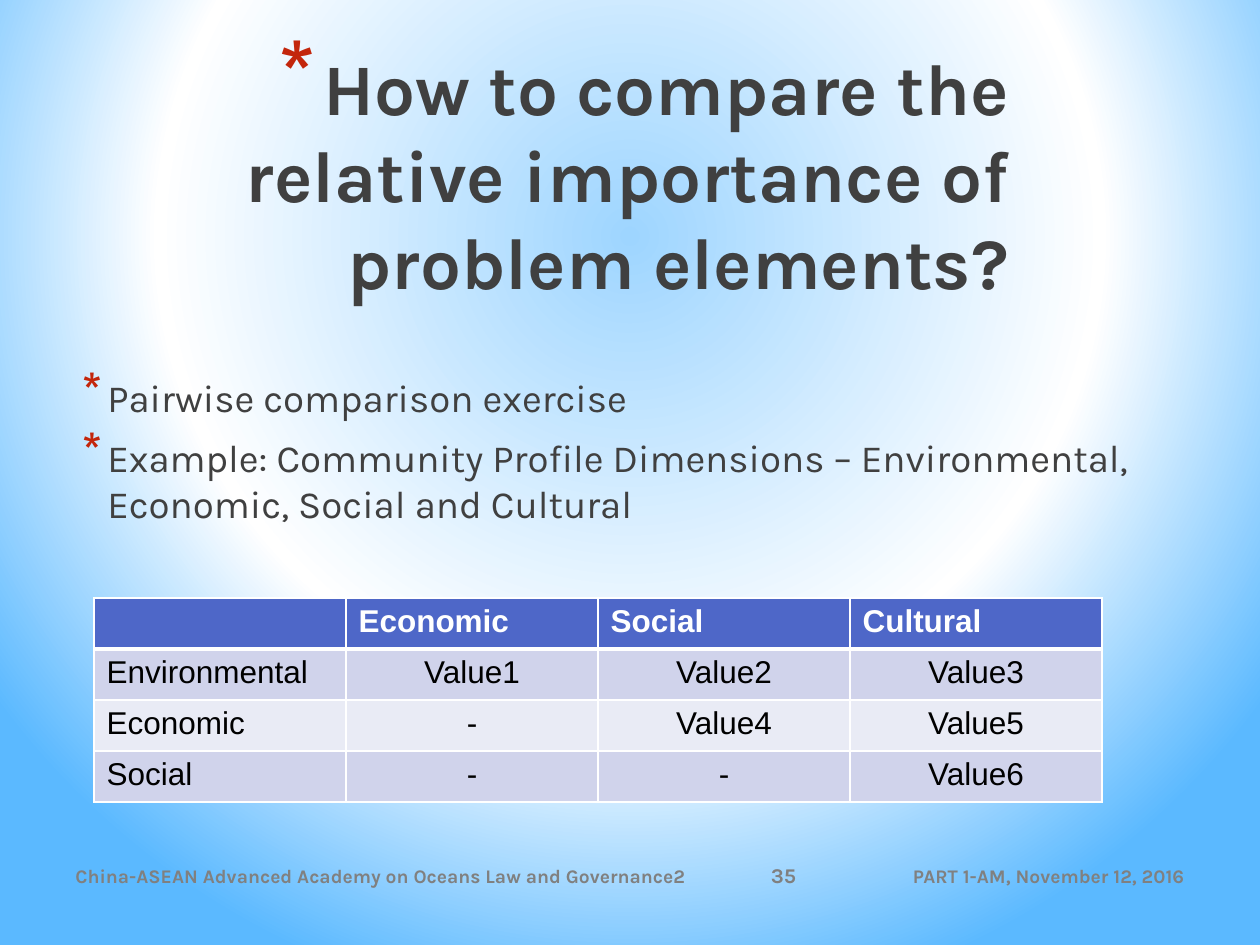
from pptx import Presentation
from pptx.dml.color import RGBColor
from pptx.enum.text import MSO_ANCHOR, PP_ALIGN
from pptx.oxml import parse_xml
from pptx.oxml.ns import nsdecls
from pptx.util import Emu, Pt

LEFT, CENTER, RIGHT = PP_ALIGN.LEFT, PP_ALIGN.CENTER, PP_ALIGN.RIGHT
TOP, MIDDLE = MSO_ANCHOR.TOP, MSO_ANCHOR.MIDDLE

SCALE = 914400 / 126  # EMU per px
WIDTH, HEIGHT = 1260, 945

DARK = RGBColor(0x40, 0x40, 0x40)
GRAY = RGBColor(0x80, 0x80, 0x80)
RED = RGBColor(0xC3, 0x26, 0x0C)
WHITE = RGBColor(0xFF, 0xFF, 0xFF)
BLACK = RGBColor(0x00, 0x00, 0x00)
HEADER_BLUE = RGBColor(0x4E, 0x67, 0xC8)
BAND_DARK = RGBColor(0xD0, 0xD3, 0xEB)
BAND_LIGHT = RGBColor(0xE9, 0xEB, 0xF5)
GLOW = [(0, RGBColor(0x9E, 0xD5, 0xFF)), (60, WHITE),
        (100, RGBColor(0x5B, 0xB9, 0xFF))]

TITLE_FONT = {"name": "Karla", "size": Pt(41.4), "bold": True}
BODY_FONT = {"name": "Karla", "size": Pt(22), "bold": False}
FOOTER_FONT = {"name": "Karla", "size": Pt(11), "bold": True}
NUMBER_FONT = {**FOOTER_FONT, "size": Pt(12)}
HEADER_FONT = {"name": "Arial", "size": Pt(18), "bold": True}
CELL_FONT = {**HEADER_FONT, "bold": False}

# Content: bullet is (left margin px, first-line indent px, size %)
TEXTS = [
    {"lines": ["How to compare the relative importance of problem elements?"],
     "box": (124, 37, 897, 158), "font": TITLE_FONT, "color": DARK,
     "align": RIGHT, "anchor": TOP, "bullet": (44, -44, 128)},
    {"lines": ["Pairwise comparison exercise",
               "Example: Community Profile Dimensions – Environmental, "
               "Economic, Social and Cultural"],
     "box": (63, 368, 1134, 189), "font": BODY_FONT, "color": DARK,
     "align": LEFT, "anchor": TOP, "bullet": (32, -25, 130)},
    {"lines": ["China-ASEAN Advanced Academy on Oceans Law and Governance2"],
     "box": (63, 851, 667, 50), "font": FOOTER_FONT, "color": GRAY,
     "align": LEFT, "anchor": MIDDLE, "bullet": None},
    {"lines": ["35"],
     "box": (740, 850, 87, 50), "font": NUMBER_FONT, "color": GRAY,
     "align": CENTER, "anchor": MIDDLE, "bullet": None},
    {"lines": ["PART 1-AM, November 12, 2016"],
     "box": (851, 851, 346, 50), "font": FOOTER_FONT, "color": GRAY,
     "align": RIGHT, "anchor": MIDDLE, "bullet": None},
]
COMPARISON = [
    ["", "Economic", "Social", "Cultural"],
    ["Environmental", "Value1", "Value2", "Value3"],
    ["Economic", "-", "Value4", "Value5"],
    ["Social", "-", "-", "Value6"],
]
TABLE_LEFT, TABLE_TOP, COLUMN_WIDTH, ROW_HEIGHT = 94, 598, 252, 51


def px(value):
    return Emu(round(value * SCALE))


def write(paragraph, text, font, color, align):
    paragraph.alignment = align
    if not text:
        return
    run = paragraph.add_run()
    run.text = text
    for attribute, value in font.items():
        setattr(run.font, attribute, value)
    run.font.color.rgb = color


def add_bullet(paragraph, margin, indent, percent):
    properties = paragraph._p.get_or_add_pPr()
    properties.set("marL", str(px(margin)))
    properties.set("indent", str(px(indent)))
    for xml in (f'<a:buClr {nsdecls("a")}><a:srgbClr val="{RED}"/></a:buClr>',
                f'<a:buSzPct {nsdecls("a")} val="{percent * 1000}"/>',
                f'<a:buChar {nsdecls("a")} char="*"/>'):
        properties.append(parse_xml(xml))


def add_text(slide, item):
    frame = slide.shapes.add_textbox(*map(px, item["box"])).text_frame
    frame.word_wrap = True
    frame.vertical_anchor = item["anchor"]
    for i, line in enumerate(item["lines"]):
        paragraph = frame.add_paragraph() if i else frame.paragraphs[0]
        if item["bullet"]:
            add_bullet(paragraph, *item["bullet"])
            paragraph.space_after = Pt(3)
        if i:
            paragraph.space_before = Pt(5)
        write(paragraph, line, item["font"], item["color"], item["align"])


def set_borders(cell, widths):
    properties = cell._tc.get_or_add_tcPr()
    for i, (side, width) in enumerate(widths.items()):
        properties.insert(i, parse_xml(
            f'<a:ln{side} {nsdecls("a")} w="{Pt(width)}"><a:solidFill>'
            f'<a:srgbClr val="{WHITE}"/></a:solidFill></a:ln{side}>'))


def add_comparison_table(slide):
    rows, columns = len(COMPARISON), len(COMPARISON[0])
    table = slide.shapes.add_table(
        rows, columns, px(TABLE_LEFT), px(TABLE_TOP),
        px(columns * COLUMN_WIDTH), px(rows * ROW_HEIGHT)).table
    for column in table.columns:
        column.width = px(COLUMN_WIDTH)
    for r, values in enumerate(COMPARISON):
        table.rows[r].height = px(ROW_HEIGHT)
        header = r == 0
        band = BAND_DARK if r % 2 else BAND_LIGHT
        for c, value in enumerate(values):
            cell = table.cell(r, c)
            cell.fill.solid()
            cell.fill.fore_color.rgb = HEADER_BLUE if header else band
            set_borders(cell, {"L": 1, "R": 1, "T": 3 if r == 1 else 1,
                               "B": 3 if header else 1})
            write(cell.text_frame.paragraphs[0], value,
                  HEADER_FONT if header else CELL_FONT,
                  WHITE if header else BLACK,
                  LEFT if header or c == 0 else CENTER)


def set_background(slide):
    slide.background.fill.gradient()
    gradient = slide.element.xpath(".//p:bgPr/a:gradFill")[0]
    stops = "".join(f'<a:gs pos="{position * 1000}"><a:srgbClr val="{color}"/>'
                    "</a:gs>" for position, color in GLOW)
    gradient.getparent().replace(gradient, parse_xml(
        f'<a:gradFill {nsdecls("a")} rotWithShape="1"><a:gsLst>{stops}</a:gsLst>'
        '<a:path path="circle"><a:fillToRect l="20000" t="10000" r="20000" '
        'b="60000"/></a:path></a:gradFill>'))


def main():
    deck = Presentation()
    deck.slide_width, deck.slide_height = px(WIDTH), px(HEIGHT)
    slide = deck.slides.add_slide(deck.slide_layouts[6])
    set_background(slide)
    for item in TEXTS:
        add_text(slide, item)
    add_comparison_table(slide)
    deck.save("out.pptx")


if __name__ == "__main__":
    main()
